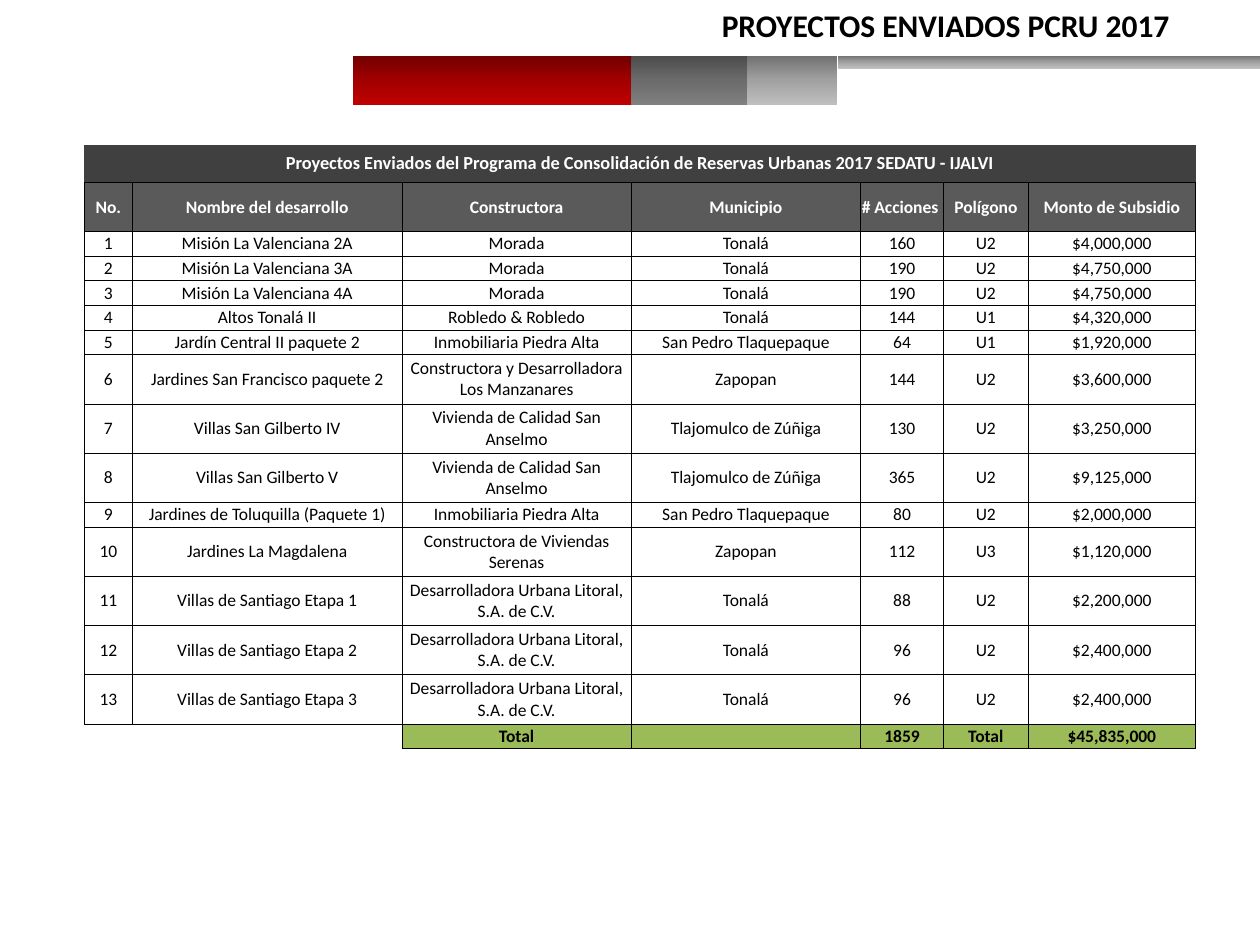
from copy import deepcopy

from lxml import etree
from pptx import Presentation
from pptx import util as u
from pptx.dml.color import RGBColor
from pptx.enum import shapes, text
from pptx.oxml.ns import qn

WIDTH, HEIGHT = u.Inches(10), u.Inches(7.5)
FONT = "Calibri"
COLORS = {
    "ink": "000000", "paper": "FFFFFF", "title": "404040",
    "header": "5A5A5A", "total": "9BBB59",
}
GRADIENTS = {
    "red": ("720000", "A20000", "C00000"),
    "dark": ("4C4C4C", "6B6B6B", "808080"),
    "light": ("717171", "A1A1A1", "BFBFBF"),
}
# Left, width and height as shares of the band
BARS = [
    ("red", 0, 0.317, 1), ("dark", 0.307, 0.129, 1),
    ("light", 0.435, 0.099, 1), ("light", 0.535, 0.465, 0.26),
]
NO_GRID_STYLE = "{2D5ABB26-0587-4C30-8999-92F81FD0307C}"
COLUMNS = [0.38, 2.14, 1.82, 1.82, 0.66, 0.67, 1.33]
TITLE_ROW = 0.3 / 4.8  # share of the table height

TABLE_TITLE = ("Proyectos Enviados del Programa de Consolidación de "
               "Reservas Urbanas 2017 SEDATU - IJALVI")
HEADERS = ["No.", "Nombre del desarrollo", "Constructora", "Municipio",
           "# Acciones ", "Polígono", "Monto de Subsidio"]
MORADA = "Morada"
PIEDRA = "Inmobiliaria Piedra Alta"
ANSELMO = "Vivienda de Calidad San Anselmo"
LITORAL = "Desarrolladora Urbana Litoral, S.A. de C.V."
PROJECTS = [
    ("Misión La Valenciana 2A", MORADA, "Tonalá", "160", "U2", "$4,000,000"),
    ("Misión La Valenciana 3A", MORADA, "Tonalá", "190", "U2", "$4,750,000"),
    ("Misión La Valenciana 4A", MORADA, "Tonalá", "190", "U2", "$4,750,000"),
    ("Altos Tonalá II", "Robledo & Robledo", "Tonalá", "144", "U1", "$4,320,000"),
    ("Jardín Central II paquete 2", PIEDRA, "San Pedro Tlaquepaque", "64", "U1",
     "$1,920,000"),
    ("Jardines San Francisco paquete 2",
     "Constructora y Desarrolladora Los Manzanares", "Zapopan", "144", "U2",
     "$3,600,000"),
    ("Villas San Gilberto IV", ANSELMO, "Tlajomulco de Zúñiga", "130", "U2",
     "$3,250,000"),
    ("Villas San Gilberto V", ANSELMO, "Tlajomulco de Zúñiga", "365", "U2",
     "$9,125,000"),
    ("Jardines de Toluquilla (Paquete 1)", PIEDRA, "San Pedro Tlaquepaque", "80",
     "U2", "$2,000,000"),
    ("Jardines La Magdalena", "Constructora de Viviendas Serenas", "Zapopan",
     "112", "U3", "$1,120,000"),
    ("Villas de Santiago Etapa 1", LITORAL, "Tonalá", "88", "U2", "$2,200,000"),
    ("Villas de Santiago Etapa 2", LITORAL, "Tonalá", "96", "U2", "$2,400,000"),
    ("Villas de Santiago Etapa 3", LITORAL, "Tonalá", "96", "U2", "$2,400,000"),
]
TOTALS = ["", "", "Total", "", "1859", "Total", "$45,835,000"]


def share(x, y, w, h):
    """Box in slide units from shares of the slide's size."""
    return [int(WIDTH * x), int(HEIGHT * y), int(WIDTH * w), int(HEIGHT * h)]


def color(name):
    return RGBColor.from_string(COLORS[name])


def style(paragraph, size, ink="ink", bold=False):
    font = paragraph.font
    font.name, font.size, font.bold = FONT, u.Pt(size), bold
    font.color.rgb = color(ink)


def fill_gradient(shape, hexes):
    shape.fill.gradient()
    shape.fill.gradient_angle = 270
    stop_list = next(shape.element.iter(qn("a:gsLst")))
    stop_list.append(deepcopy(stop_list[-1]))
    for index, stop in enumerate(shape.fill.gradient_stops):
        stop.position = index / 2
        stop.color.rgb = RGBColor.from_string(hexes[index])


def add_band(slide, box):
    left, top, width, height = box
    band = slide.shapes.add_group_shape()
    for tone, x, w, h in BARS:
        bar = band.shapes.add_shape(
            shapes.MSO_SHAPE.RECTANGLE, left + int(width * x), top,
            int(width * w), int(height * h))
        bar.shadow.inherit = False
        bar.line.fill.background()
        fill_gradient(bar, GRADIENTS[tone])


def add_heading(slide, box):
    frame = slide.shapes.add_textbox(*box).text_frame
    frame.word_wrap = True
    frame.auto_size = text.MSO_AUTO_SIZE.SHAPE_TO_FIT_TEXT
    heading = frame.paragraphs[0]
    heading.text = "PROYECTOS ENVIADOS PCRU 2017"
    style(heading, 18, bold=True)


def add_borders(cell, sides):
    properties = cell._tc.get_or_add_tcPr()
    for side in sides:
        line = etree.SubElement(properties, qn(f"a:ln{side}"), w=str(u.Pt(0.5)))
        solid = etree.SubElement(line, qn("a:solidFill"))
        etree.SubElement(solid, qn("a:srgbClr"), val=COLORS["ink"])


def fill_cell(cell, wording, fill=None, sides="LRTB", size=10, **look):
    cell.margin_left = cell.margin_right = cell.margin_top = cell.margin_bottom = 0
    cell.vertical_anchor = text.MSO_ANCHOR.MIDDLE
    add_borders(cell, sides)
    if fill:
        cell.fill.solid()
        cell.fill.fore_color.rgb = color(fill)
    else:
        cell.fill.background()
    paragraph = cell.text_frame.paragraphs[0]
    if wording:
        paragraph.text = wording
    else:
        etree.SubElement(paragraph._p, qn("a:endParaRPr"), sz=str(size * 100))
    paragraph.alignment = text.PP_ALIGN.CENTER
    style(paragraph, size, **look)


def add_projects(slide, box):
    width, height = box[2:]
    last = len(COLUMNS) - 1
    frame = slide.shapes.add_table(len(PROJECTS) + 3, len(COLUMNS), *box)
    table = frame.table
    next(frame.element.iter(qn("a:tableStyleId"))).text = NO_GRID_STYLE
    table.first_row = table.horz_banding = False

    # Grid: the header and long builder names take two lines
    lines = [2] + [2 if len(project[1]) > 25 else 1 for project in PROJECTS] + [1]
    line_height = height * (1 - TITLE_ROW) / sum(lines)
    table.rows[0].height = int(height * TITLE_ROW)
    for row, count in enumerate(lines, 1):
        table.rows[row].height = int(line_height * count)
    for column, part in zip(table.columns, COLUMNS):
        column.width = int(width * part / sum(COLUMNS))

    # Title and header
    table.cell(0, 0).merge(table.cell(0, last))
    fill_cell(table.cell(0, 0), TABLE_TITLE, "title", "B", 10.5,
              ink="paper", bold=True)
    for col, header in enumerate(HEADERS):
        fill_cell(table.cell(1, col), header, "header",
                  "LRB" if col == last else "LRTB", ink="paper", bold=True)

    # Projects
    for number, project in enumerate(PROJECTS, 1):
        for col, wording in enumerate((str(number), *project)):
            fill_cell(table.cell(number + 1, col), wording,
                      "paper" if col < 2 else None)

    # Totals
    for col, wording in enumerate(TOTALS):
        fill_cell(table.cell(len(PROJECTS) + 2, col), wording,
                  "paper" if col < 2 else "total",
                  {0: "T", 1: "RT"}.get(col, "LRTB"), bold=True)


def main():
    deck = Presentation()
    deck.slide_width, deck.slide_height = WIDTH, HEIGHT
    slide = deck.slides.add_slide(deck.slide_layouts[6])
    add_band(slide, share(0.28, 0.059, 0.72, 0.052))
    add_heading(slide, share(0.563, 0, 0.409, 0.053))
    add_projects(slide, share(0.067, 0.153, 0.882, 0.64))
    deck.save("out.pptx")


if __name__ == "__main__":
    main()
